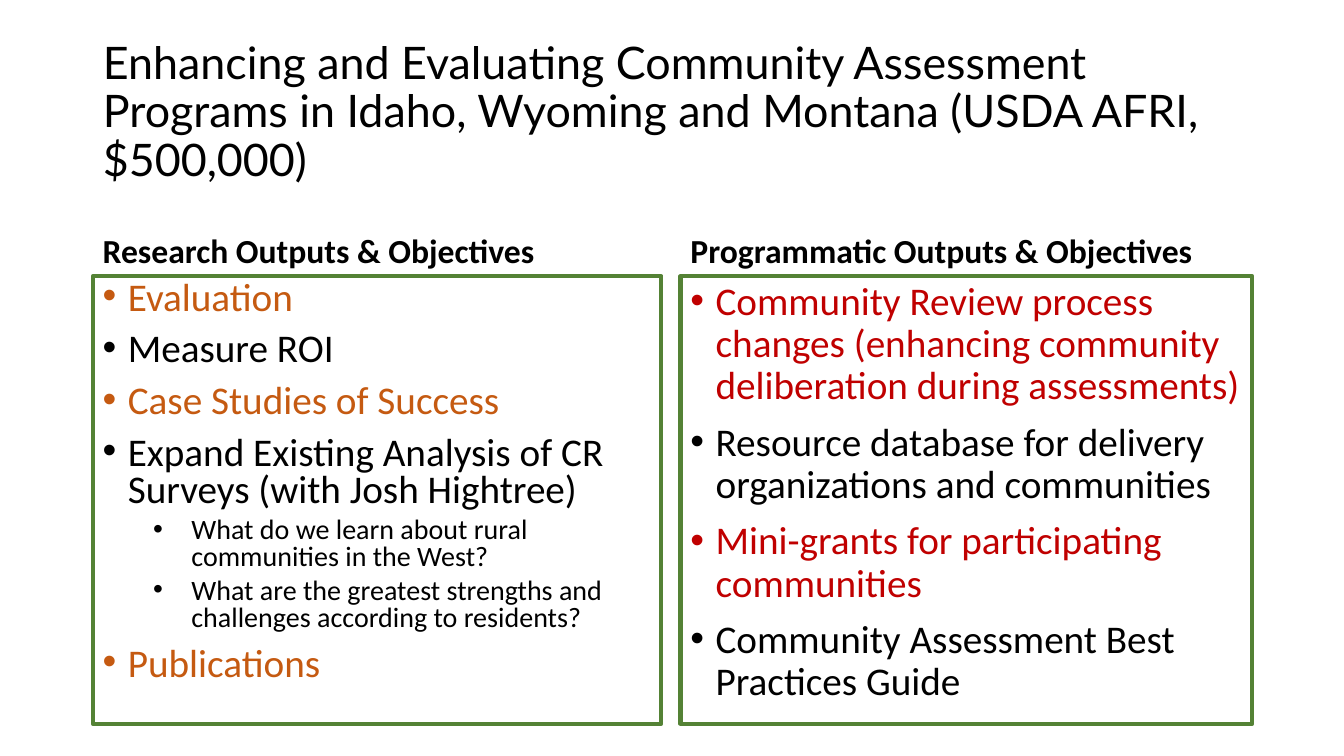
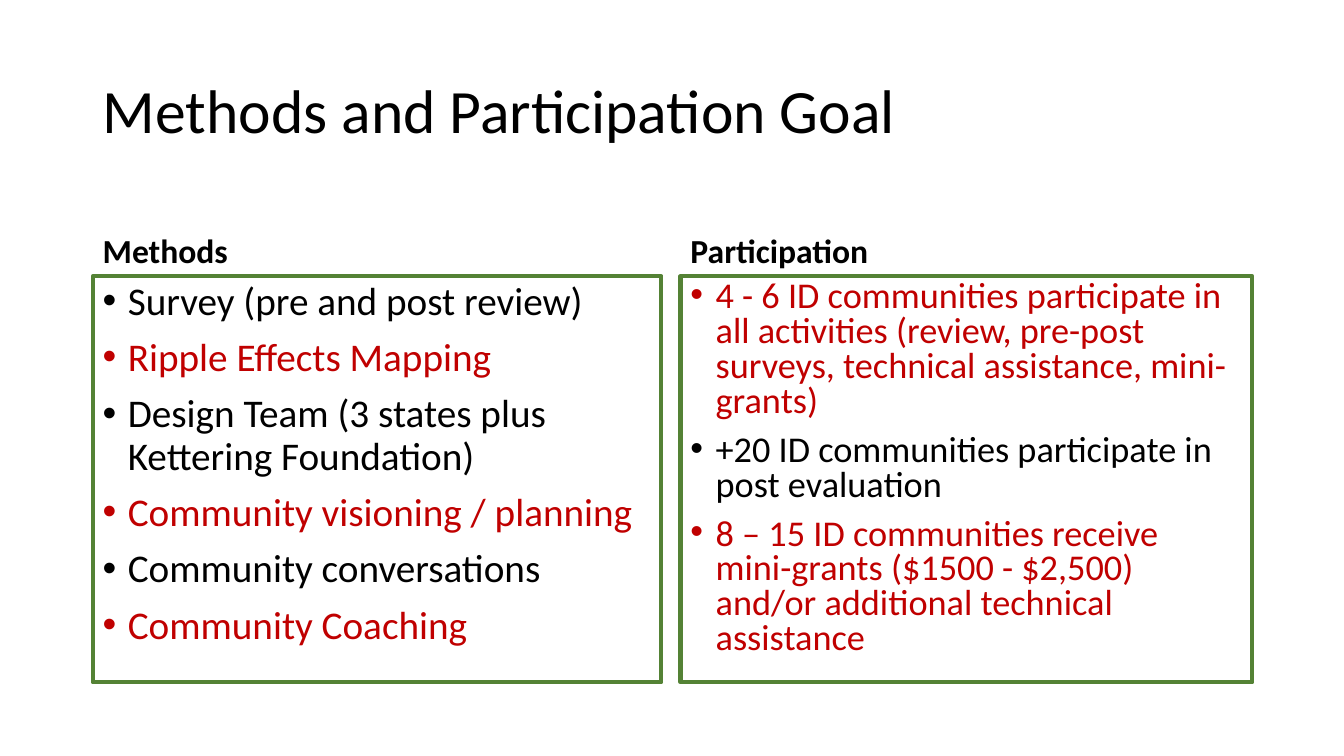
from pptx import Presentation
from pptx.dml.color import RGBColor as RGB
from pptx.enum.shapes import MSO_SHAPE as Shape
from pptx.enum.text import MSO_ANCHOR as Anchor, MSO_AUTO_SIZE as Fit, PP_ALIGN as Align
from pptx.oxml.ns import qn
from pptx.util import Inches, Pt
from lxml.etree import SubElement

HUES = {"ink": "000000", "edge": "548235", "rust": "C55A11", "red": "C00000"}
FONT = "Calibri"
WIDE, HIGH = 13.33, 7.5
LEFT, SPAN, GAP = 0.92, 11.5, 0.19
TOP, HEAD = 1.84, 0.9
COLS = ((LEFT, 5.64), (LEFT + 5.64 + GAP, SPAN - 5.64 - GAP))
INDENT = ((0.25, 0.25), (0.88, 0.38))

SLIDES = (
    {
        "title": "Enhancing and Evaluating Community Assessment Programs in Idaho, "
                 "Wyoming and Montana (USDA AFRI, $500,000)",
        "font": "Lato", "size": 32, "deep": 4.44,
        "cols": (
            ("Research Outputs & Objectives", 28, 0.8, (
                ("Evaluation", "rust", 0),
                ("Measure ROI", "ink", 0),
                ("Case Studies of Success", "rust", 0),
                ("Expand Existing Analysis of CR Surveys (with Josh Hightree)", "ink", 0),
                ("What do we learn about rural communities in the West?", "ink", 1),
                ("What are the greatest strengths and challenges according to residents?",
                 "ink", 1),
                ("Publications", "rust", 0))),
            ("Programmatic Outputs & Objectives", 28, 0.9, (
                ("Community Review process changes (enhancing community deliberation "
                 "during assessments)", "red", 0),
                ("Resource database for delivery organizations and communities", "ink", 0),
                ("Mini-grants for participating communities", "red", 0),
                ("Community Assessment Best Practices Guide", "ink", 0))),
        ),
    },
    {
        "title": "Methods and Participation Goal",
        "font": FONT, "size": 44, "deep": 4.03,
        "cols": (
            ("Methods", 28, 0.9, (
                ("Survey (pre and post review)", "ink", 0),
                ("Ripple Effects Mapping", "red", 0),
                ("Design Team (3 states plus Kettering Foundation)", "ink", 0),
                ("Community visioning / planning", "red", 0),
                ("Community conversations", "ink", 0),
                ("Community Coaching", "red", 0))),
            ("Participation", 25.9, 0.8, (
                ("4 - 6 ID communities participate in all activities (review, pre-post "
                 "surveys, technical assistance, mini-grants)", "red", 0),
                ("+20 ID communities participate in post evaluation", "ink", 0),
                ("8 – 15 ID communities receive mini-grants ($1500 - $2,500) and/or "
                 "additional technical assistance", "red", 0))),
        ),
    },
)


def place(box):
    """Turn a box in inches into slide lengths."""
    return [Inches(n) for n in box]


def frame(shape, anchor):
    """Ready the text frame of a shape."""
    text = shape.text_frame
    text.word_wrap = True
    text.auto_size = Fit.NONE
    text.vertical_anchor = anchor
    return text


def write(para, words, size, hue="ink", font=FONT, bold=False, pitch=0.9):
    """Add one styled run to a left-aligned paragraph."""
    para.alignment = Align.LEFT
    para.line_spacing = pitch
    run = para.add_run()
    run.text = words
    run.font.name = font
    run.font.size = Pt(size)
    run.font.bold = bold
    run.font.color.rgb = RGB.from_string(HUES[hue])


def bullet(para, level):
    """Give a paragraph a hanging bullet."""
    left, hang = INDENT[level]
    props = para._p.get_or_add_pPr()
    props.set("marL", str(Inches(left)))
    props.set("indent", str(-Inches(hang)))
    SubElement(props, qn("a:buFont")).set("typeface", "Arial")
    SubElement(props, qn("a:buChar")).set("char", "•")
    para.level = level


def title(slide, box, words, size, font):
    """Place and style the slide title."""
    shape = slide.shapes.title
    shape.left, shape.top, shape.width, shape.height = place(box)
    text = frame(shape, Anchor.MIDDLE)
    write(text.paragraphs[0], words, size, font=font)


def heading(slide, box, words):
    """Set a bold heading at the foot of its box."""
    text = frame(slide.shapes.add_textbox(*place(box)), Anchor.BOTTOM)
    write(text.paragraphs[0], words, 24, bold=True)


def panel(slide, box, size, pitch, items):
    """Draw an outlined box that holds a bullet list."""
    shape = slide.shapes.add_shape(Shape.RECTANGLE, *place(box))
    shape.shadow.inherit = False
    shape.fill.background()
    shape.line.color.rgb = RGB.from_string(HUES["edge"])
    shape.line.width = Pt(3)
    text = frame(shape, Anchor.TOP)
    for row, (words, hue, level) in enumerate(items):
        para = text.add_paragraph() if row else text.paragraphs[0]
        bullet(para, level)
        if row:
            para.space_before = Pt(5 if level else 10)
        write(para, words, 20 if level else size, hue, pitch=pitch)


def compare(deck, data):
    """Build a slide with a title and two headed lists."""
    slide = deck.slides.add_slide(deck.slide_layouts[5])
    title(slide, (LEFT, 0.4, SPAN, 1.45), data["title"], data["size"], data["font"])
    for (left, wide), (head, size, pitch, items) in zip(COLS, data["cols"]):
        heading(slide, (left, TOP, wide, HEAD), head)
        panel(slide, (left, TOP + HEAD, wide, data["deep"]), size, pitch, items)


def main():
    """Build and save the deck."""
    deck = Presentation()
    deck.slide_width, deck.slide_height = Inches(WIDE), Inches(HIGH)
    for data in SLIDES:
        compare(deck, data)
    deck.save("out.pptx")


if __name__ == "__main__":
    main()
